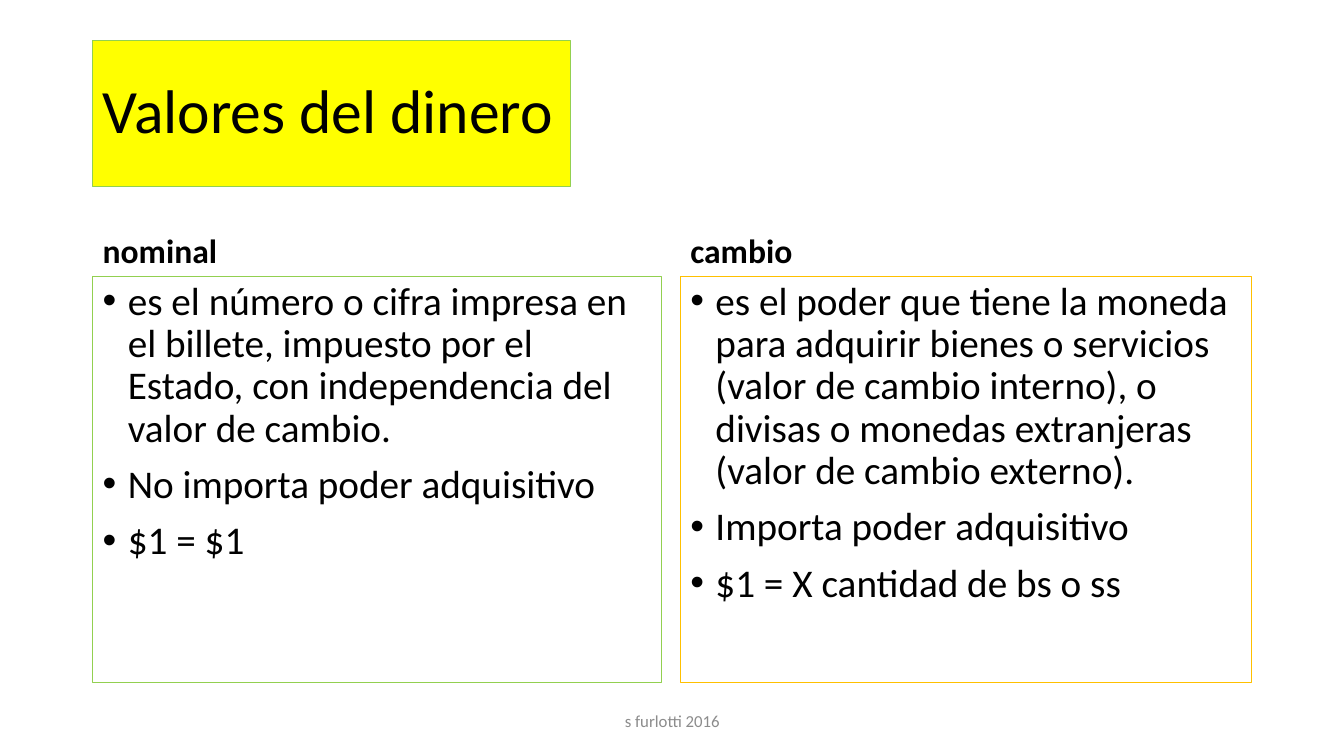
"""Build the slide on the nominal and exchange values of money."""
from dataclasses import dataclass

from lxml import etree
from pptx import Presentation, util as u
from pptx.dml.color import RGBColor
from pptx.enum import shapes, text
from pptx.oxml import ns

COLORS = {"yellow": "FFFF00", "green": "92D050", "orange": "FFC000",
          "black": "000000", "gray": "8C8C8C"}
LEFT, RIGHT = 66.24, 486
HEAD_TOP, BODY_TOP = 132.48, 197.28


@dataclass
class Box:
    x: float
    y: float
    w: float
    h: float
    lines: list[str]
    size: float
    color: str = "black"
    fill: str | None = None
    line: str | None = None
    bold: bool = False
    bullets: bool = False
    before: float = 0
    spacing: float = 0.9
    anchor: text.MSO_ANCHOR = text.MSO_ANCHOR.MIDDLE
    align: text.PP_ALIGN = text.PP_ALIGN.LEFT


@dataclass
class Column:
    x: float
    w: float
    line: str
    head: str
    items: list[str]


def rgb(name: str) -> RGBColor:
    return RGBColor.from_string(COLORS[name])


def add_bullet(p) -> None:
    pPr = p._p.get_or_add_pPr()
    pPr.set("marL", str(u.Pt(18)))
    pPr.set("indent", str(u.Pt(-18)))
    etree.SubElement(pPr, ns.qn("a:buFont")).set("typeface", "Arial")
    etree.SubElement(pPr, ns.qn("a:buChar")).set("char", "•")


def draw_box(s, box: Box) -> None:
    frame = [u.Pt(v) for v in (box.x, box.y, box.w, box.h)]
    if box.line:
        sp = s.shapes.add_shape(shapes.MSO_SHAPE.RECTANGLE, *frame)
        sp.shadow.inherit = False
        sp.line.color.rgb = rgb(box.line)
        sp.line.width = u.Pt(0.75)
        if box.fill:
            sp.fill.solid()
            sp.fill.fore_color.rgb = rgb(box.fill)
        else:
            sp.fill.background()
    else:
        sp = s.shapes.add_textbox(*frame)
    tf = sp.text_frame
    tf.word_wrap = True
    tf.vertical_anchor = box.anchor
    for i, line in enumerate(box.lines):
        p = tf.add_paragraph() if i else tf.paragraphs[0]
        p.alignment = box.align
        p.line_spacing = box.spacing
        p.space_before = u.Pt(box.before)
        if box.bullets:
            add_bullet(p)
        r = p.add_run()
        r.text = line
        r.font.name = "Calibri"
        r.font.size = u.Pt(box.size)
        r.font.bold = box.bold
        r.font.color.rgb = rgb(box.color)


def draw_column(s, col: Column) -> None:
    draw_box(s, Box(col.x, HEAD_TOP, col.w, BODY_TOP - HEAD_TOP, [col.head], 24,
                    bold=True, before=10, anchor=text.MSO_ANCHOR.BOTTOM))
    draw_box(s, Box(col.x, BODY_TOP, col.w, 290.16, col.items, 28, line=col.line,
                    bullets=True, before=10, anchor=text.MSO_ANCHOR.TOP))


COLUMNS = [
    Column(LEFT, 406.08, "green", "nominal", [
        "es el número o cifra impresa en el billete, impuesto por el Estado, "
        "con independencia del valor de cambio.",
        "No importa poder adquisitivo",
        "$1 = $1"]),
    Column(RIGHT, 408.24, "orange", "cambio", [
        "es el poder que tiene la moneda para adquirir bienes o servicios "
        "(valor de cambio interno), o divisas o monedas extranjeras "
        "(valor de cambio externo).",
        "Importa poder adquisitivo",
        "$1 = X cantidad de bs o ss"]),
]


def main() -> None:
    prs = Presentation()
    prs.slide_width, prs.slide_height = u.Pt(960), u.Pt(540)
    s = prs.slides.add_slide(prs.slide_layouts[6])
    draw_box(s, Box(LEFT, 28.8, 341.28, 104.4, ["Valores del dinero"], 44,
                    fill="yellow", line="green"))
    for col in COLUMNS:
        draw_column(s, col)
    draw_box(s, Box(318.24, 500.4, 324, 28.8, ["s furlotti 2016"], 12, "gray",
                    spacing=1.0, align=text.PP_ALIGN.CENTER))
    prs.save("out.pptx")


if __name__ == "__main__":
    main()
